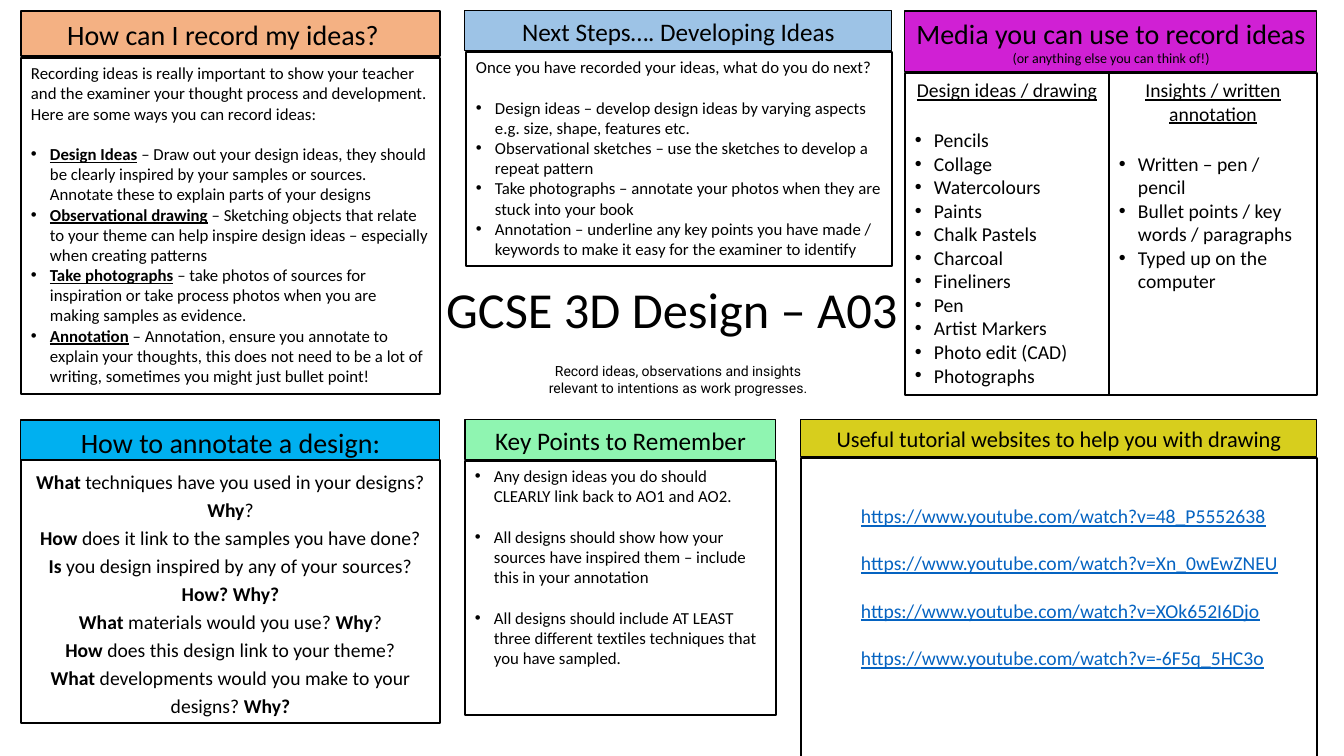
from dataclasses import dataclass, field
from lxml.etree import SubElement
from pptx import Presentation
from pptx.dml.color import RGBColor
from pptx.enum.shapes import MSO_SHAPE
from pptx.enum.text import MSO_ANCHOR, PP_ALIGN
from pptx.oxml.ns import qn
from pptx.util import Emu, Pt

PX = 914400 / 100.8
BULLET_INDENT = 19
BLACK, WHITE, LINK = "000000", "FFFFFF", "0563C1"


@dataclass
class Panel:
    box: tuple              # left, top, width, height
    size: int
    intro: list = field(default_factory=list)
    bullets: list = field(default_factory=list)
    first_gap: float = 0    # points between intro and bullets
    gap: float = 0          # points between paragraphs of one kind
    centred: bool = False
    marked: str = ""        # b: bold, u: underlined, for text between asterisks
    line_pitch: int = 0
    color: str = BLACK
    inset: tuple = (10, 5)  # left, top


# Headers: box, fill, line width, lines with sizes
HEADERS = [
    ((21, 11, 419, 45), "F4B183", 1, []),
    ((465, 11, 427, 40), "9DC3E6", 0.75, [("Next Steps…. Developing Ideas", 18)]),
    ((21, 420, 419, 44), "00B0F0", 0.75, [("How to annotate a design:", 20)]),
    ((801, 420, 516, 37), "D7CE1D", 0.75,
     [("Useful tutorial websites to help you with drawing", 16)]),
    ((905, 11, 412, 61), "D020D4", 0.75,
     [("Media you can use to record ideas", 20), ("(or anything else you can think of!)", 10)]),
    ((465, 420, 311, 40), "8FF5B1", 0.75, [("Key Points to Remember", 18)]),
]

PANELS = [
    Panel((21, 58, 419, 336), 12, first_gap=14.5, marked="bu", intro=[
        "Recording ideas is really important to show your teacher and the examiner your thought "
        "process and development. Here are some ways you can record ideas:",
    ], bullets=[
        "*Design Ideas* – Draw out your design ideas, they should be clearly inspired by your "
        "samples or sources. Annotate these to explain parts of your designs",
        "*Observational drawing* – Sketching objects that relate to your theme can help inspire "
        "design ideas – especially when creating patterns",
        "*Take photographs* – take photos of sources for inspiration or take process photos when "
        "you are making samples as evidence.",
        "*Annotation* – Annotation, ensure you annotate to explain your thoughts, this does not "
        "need to be a lot of writing, sometimes you might just bullet point!",
    ]),
    Panel((21, 460, 419, 263), 14, centred=True, marked="b", line_pitch=20, intro=[
        "*What* techniques have you used in your designs? *Why*?",
        "*How* does it link to the samples you have done?",
        "*Is* you design inspired by any of your sources? *How? Why?*",
        "*What* materials would you use? *Why*?",
        "*How* does this design link to your theme?",
        "*What* developments would you make to your designs? *Why?*",
    ]),
    Panel((801, 458, 516, 308), 14, gap=17, marked="u", color=LINK, inset=(60, 46), intro=[
        "*https://www.youtube.com/watch?v=48_P5552638*",
        "*https://www.youtube.com/watch?v=Xn_0wEwZNEU*",
        "*https://www.youtube.com/watch?v=XOk652I6Djo*",
        "*https://www.youtube.com/watch?v=-6F5q_5HC3o*",
    ]),
    Panel((905, 73, 204, 322), 14, first_gap=19, marked="u",
          intro=["*Design ideas / drawing*"], bullets=[
              "Pencils", "Collage", "Watercolours", "Paints", "Chalk Pastels", "Charcoal",
              "Fineliners", "Pen", "Artist Markers", "Photo edit (CAD)", "Photographs"],
          centred=True),
    Panel((466, 52, 426, 214), 12, first_gap=14.5, intro=[
        "Once you have recorded your ideas, what do you do next?",
    ], bullets=[
        "Design ideas – develop design ideas by varying aspects e.g. size, shape, features etc.",
        "Observational sketches – use the sketches to develop a repeat pattern",
        "Take photographs – annotate your photos when they are stuck into your book",
        "Annotation – underline any key points you have made / keywords to make it easy for the "
        "examiner to identify",
    ]),
    Panel((1109, 73, 208, 322), 14, first_gap=19, marked="u", centred=True,
          intro=["*Insights / written annotation*"], bullets=[
              "Written – pen / pencil", "Bullet points / key words / paragraphs",
              "Typed up on the computer"]),
    Panel((465, 461, 311, 254), 12, gap=14.5, bullets=[
        "Any design ideas you do should CLEARLY link back to AO1 and AO2.",
        "All designs should show how your sources have inspired them – include this in your "
        "annotation",
        "All designs should include AT LEAST three different textiles techniques that you have "
        "sampled.",
    ]),
]

# Free text: box, wording, size, font, wrap, anchor
LABELS = [
    ((40, 13, 366, 44), "How can I record my ideas?", 20, "Calibri", True, MSO_ANCHOR.TOP),
    ((434, 273, 476, 72), "GCSE 3D Design – A03", 36, "Calibri", False, MSO_ANCHOR.TOP),
    ((532, 357, 292, 44), "Record ideas, observations and insights relevant to intentions as "
     "work progresses.", 10, "Roboto", True, MSO_ANCHOR.MIDDLE),
]


def px(value):
    return Emu(round(value * PX))


def rgb(color):
    return RGBColor.from_string(color)


def style(run, size, color=BLACK, font="Calibri", marks=""):
    run.font.size = Pt(size)
    run.font.name = font
    run.font.color.rgb = rgb(color)
    run.font.bold = "b" in marks
    run.font.underline = "u" in marks


def add_box(slide, box, fill, line_width, inset=(10, 5)):
    rect = slide.shapes.add_shape(MSO_SHAPE.RECTANGLE, *map(px, box))
    rect.shadow.inherit = False
    rect.fill.solid()
    rect.fill.fore_color.rgb = rgb(fill)
    rect.line.color.rgb = rgb(BLACK)
    rect.line.width = Pt(line_width)
    frame = rect.text_frame
    frame.word_wrap = True
    frame.vertical_anchor = MSO_ANCHOR.TOP
    frame.margin_left, frame.margin_top = map(px, inset)
    return frame


def paragraphs(frame, count):
    return [frame.paragraphs[0]] + [frame.add_paragraph() for _ in range(count - 1)]


def add_bullet(paragraph):
    props = paragraph._p.get_or_add_pPr()
    props.set("marL", str(px(BULLET_INDENT)))
    props.set("indent", str(-px(BULLET_INDENT)))
    SubElement(props, qn("a:buFont")).set("typeface", "Arial")
    SubElement(props, qn("a:buChar")).set("char", "•")


def add_header(slide, box, fill, line_width, lines):
    frame = add_box(slide, box, fill, line_width)
    for paragraph, (wording, size) in zip(paragraphs(frame, len(lines)), lines):
        paragraph.text = wording
        paragraph.alignment = PP_ALIGN.CENTER
        style(paragraph.runs[0], size)


def add_panel(slide, panel):
    frame = add_box(slide, panel.box, WHITE, 1, panel.inset)
    wordings = panel.intro + panel.bullets
    for i, paragraph in enumerate(paragraphs(frame, len(wordings))):
        bulleted = i >= len(panel.intro)
        centred = panel.centred and not bulleted
        paragraph.alignment = PP_ALIGN.CENTER if centred else PP_ALIGN.LEFT
        if i:
            starts_list = i == len(panel.intro)
            paragraph.space_before = Pt(panel.first_gap if starts_list else panel.gap)
        if panel.line_pitch:
            paragraph.line_spacing = Pt(panel.line_pitch)
        if bulleted:
            add_bullet(paragraph)
        for j, part in enumerate(wordings[i].split("*")):
            if part:
                run = paragraph.add_run()
                run.text = part
                style(run, panel.size, panel.color, marks=panel.marked if j % 2 else "")


def add_label(slide, box, wording, size, font, wrap, anchor):
    frame = slide.shapes.add_textbox(*map(px, box)).text_frame
    frame.word_wrap = wrap
    frame.vertical_anchor = anchor
    frame.text = wording
    frame.paragraphs[0].alignment = PP_ALIGN.CENTER
    style(frame.paragraphs[0].runs[0], size, font=font)


def main():
    deck = Presentation()
    deck.slide_width, deck.slide_height = px(1344), px(756)
    slide = deck.slides.add_slide(deck.slide_layouts[6])
    for header in HEADERS:
        add_header(slide, *header)
    for panel in PANELS:
        add_panel(slide, panel)
    for label in LABELS:
        add_label(slide, *label)
    deck.save("out.pptx")


if __name__ == "__main__":
    main()
